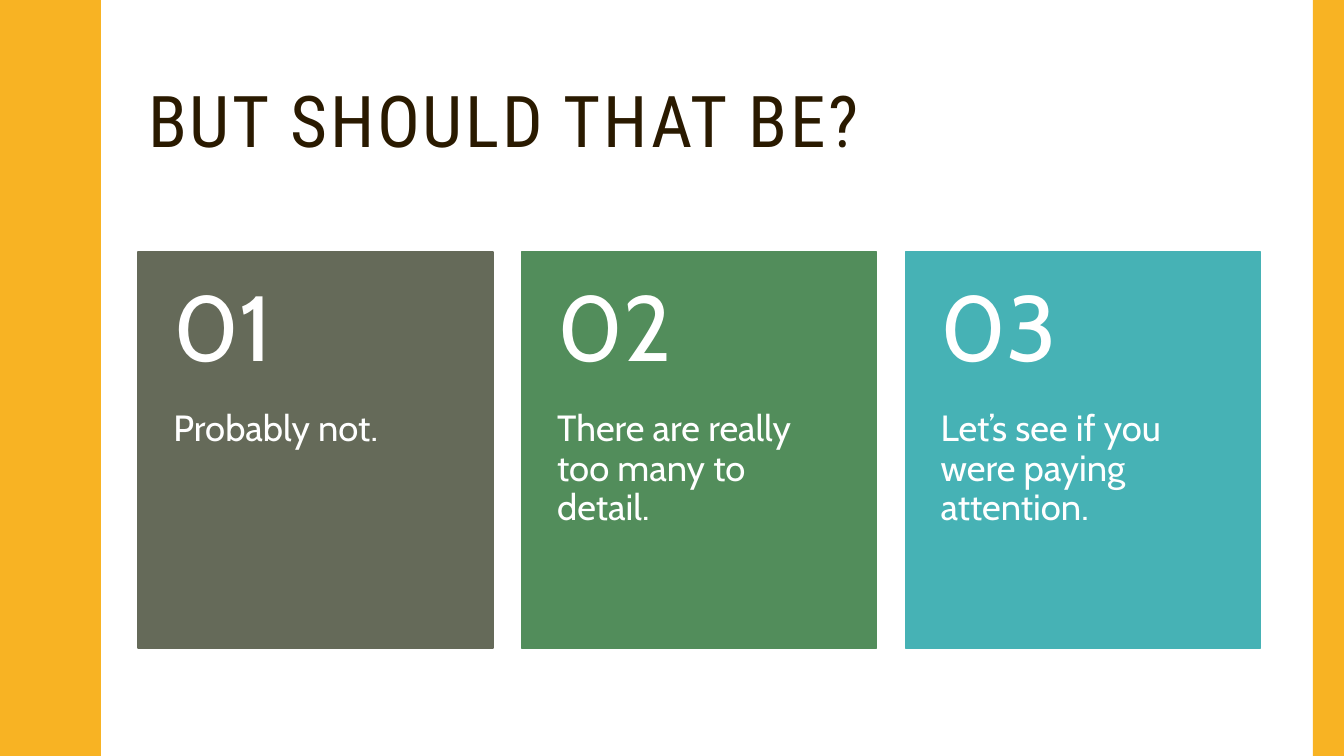
from pptx import Presentation
from pptx.dml.color import RGBColor
from pptx.enum.shapes import MSO_SHAPE
from pptx.enum.text import MSO_ANCHOR, MSO_AUTO_SIZE, PP_ALIGN
from pptx.util import Inches, Pt

YELLOW = RGBColor(0xF8, 0xB3, 0x23)
BROWN = RGBColor(0x2A, 0x1A, 0x00)
WHITE = RGBColor(0xFF, 0xFF, 0xFF)
OLIVE = RGBColor(0x65, 0x6A, 0x59)
GREEN = RGBColor(0x52, 0x8D, 0x5B)
TEAL = RGBColor(0x46, 0xB2, 0xB5)

SLIDE_WIDTH, SLIDE_HEIGHT = 13.33, 7.5
LEFT, CONTENT_WIDTH = 1.37, 11.13
CARD_TOP, CARD_WIDTH, CARD_HEIGHT = 2.5, 3.52, 3.93
NUMBER_HEIGHT = CARD_HEIGHT * 0.4
CARDS = [
    ("01", "Probably not.", OLIVE),
    ("02", "There are really too many to detail.", GREEN),
    ("03", "Let’s see if you were paying attention.", TEAL),
]
COLUMN_STEP = (CONTENT_WIDTH - CARD_WIDTH) / (len(CARDS) - 1)

WAVE_TROUGH, WAVE_CREST, HALF_WAVE = 0.78, 0.97, 0.75
WAVE_CURVE = [
    (0, 0), (0, 0.07), (0.01, 0.14), (0.02, 0.2), (0.03, 0.25),
    (0.05, 0.29), (0.07, 0.33), (0.09, 0.38), (0.11, 0.42),
    (0.13, 0.46), (0.15, 0.5), (0.17, 0.55), (0.18, 0.61), (0.19, 0.68),
]


def paint(shape, color):
    shape.shadow.inherit = False
    shape.fill.solid()
    shape.fill.fore_color.rgb = color
    shape.line.fill.background()


def write_text(shape, text, font_name, size, color, anchor, margins):
    frame = shape.text_frame
    frame.word_wrap = True
    frame.auto_size = MSO_AUTO_SIZE.NONE
    frame.vertical_anchor = anchor
    frame.margin_left = frame.margin_right = Inches(margins[0])
    frame.margin_top, frame.margin_bottom = Inches(margins[1]), Inches(margins[2])
    paragraph = frame.paragraphs[0]
    paragraph.text = text
    paragraph.alignment = PP_ALIGN.LEFT
    paragraph.line_spacing = 0.9
    paragraph.font.name = font_name
    paragraph.font.size = Pt(size)
    paragraph.font.color.rgb = color
    return paragraph


presentation = Presentation()
presentation.slide_width = Inches(SLIDE_WIDTH)
presentation.slide_height = Inches(SLIDE_HEIGHT)
slide = presentation.slides.add_slide(presentation.slide_layouts[5])
slide.background.fill.solid()
slide.background.fill.fore_color.rgb = WHITE

title = slide.shapes.title
title.left, title.top = Inches(LEFT), Inches(0.42)
title.width, title.height = Inches(CONTENT_WIDTH), Inches(1.63)
paragraph = write_text(title, "BUT SHOULD THAT BE?", "Roboto Condensed", 51, BROWN,
                       MSO_ANCHOR.MIDDLE, (0.1, 0.05, 0.05))
paragraph.runs[0].font._element.set("spc", "200")

wave_points = []
for half in range(round(SLIDE_HEIGHT / HALF_WAVE)):
    for offset, drop in WAVE_CURVE:
        x = WAVE_CREST - offset if half % 2 else WAVE_TROUGH + offset
        wave_points.append((x, half * HALF_WAVE + drop))
wave_points += [(WAVE_TROUGH, SLIDE_HEIGHT), (0, SLIDE_HEIGHT)]
builder = slide.shapes.build_freeform(0, 0, scale=Inches(1))
builder.add_line_segments(wave_points, close=True)
paint(builder.convert_to_shape(), YELLOW)

right_bar = slide.shapes.add_shape(MSO_SHAPE.RECTANGLE, Inches(13.02), 0,
                                   Inches(0.31), Inches(SLIDE_HEIGHT))
paint(right_bar, YELLOW)

for column, (number, sentence, color) in enumerate(CARDS):
    left = Inches(LEFT + column * COLUMN_STEP)
    group = slide.shapes.add_group_shape()
    card = group.shapes.add_shape(MSO_SHAPE.RECTANGLE, left, Inches(CARD_TOP),
                                  Inches(CARD_WIDTH), Inches(CARD_HEIGHT))
    paint(card, color)
    card.line.color.rgb = color
    card.line.width = Pt(1)
    sentence_box = group.shapes.add_textbox(
        left, Inches(CARD_TOP + NUMBER_HEIGHT),
        Inches(CARD_WIDTH), Inches(CARD_HEIGHT - NUMBER_HEIGHT))
    write_text(sentence_box, sentence, "Cabin", 26, WHITE, MSO_ANCHOR.TOP, (0.35, 0, 0.36))
    number_box = group.shapes.add_textbox(left, Inches(CARD_TOP),
                                          Inches(CARD_WIDTH), Inches(NUMBER_HEIGHT))
    write_text(number_box, number, "Cabin", 66, WHITE, MSO_ANCHOR.MIDDLE, (0.35, 0.18, 0.18))

presentation.save("out.pptx")
